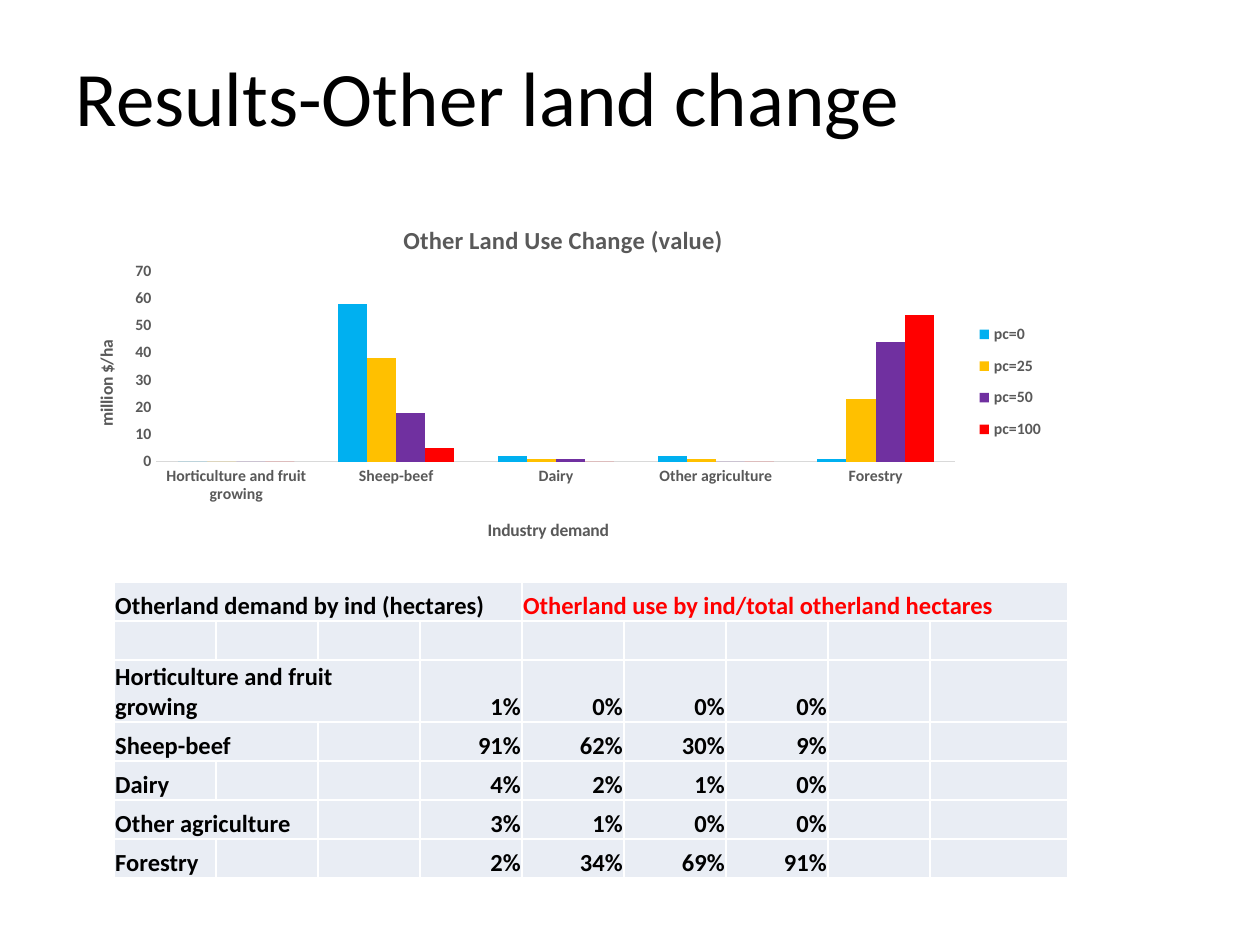
from dataclasses import dataclass
from typing import Any, NamedTuple, Optional

from lxml.etree import SubElement
from pptx import Presentation
from pptx.chart.data import CategoryChartData
from pptx.dml.color import RGBColor
from pptx.enum.chart import XL_CHART_TYPE as ChartType
from pptx.enum.chart import XL_LEGEND_POSITION as LegendPosition
from pptx.enum.chart import XL_TICK_MARK as TickMark
from pptx.enum.text import MSO_ANCHOR as Anchor
from pptx.enum.text import PP_ALIGN as Align
from pptx.oxml import parse_xml
from pptx.oxml.ns import nsdecls, qn
from pptx.util import Emu, Pt

EMU_PER_PX = 914400 / 126


@dataclass(frozen=True)
class Theme:
    font: str = "Calibri"
    black: str = "000000"
    gray: str = "595959"
    axis_line: str = "D9D9D9"
    red: str = "FF0000"
    cell: str = "E9EDF4"
    border: str = "FFFFFF"
    title_size: int = 44
    heading_size: int = 14
    axis_title_size: int = 10
    label_size: int = 9


class Box(NamedTuple):
    left: int
    top: int
    width: int
    height: int


class Series(NamedTuple):
    name: str
    color: str
    values: tuple[int, ...]


class LandUse(NamedTuple):
    industry: str
    span: int
    shares: tuple[int, ...]


THEME = Theme()
TITLE_BOX = Box(63, 38, 1134, 157)
CHART_BOX = Box(63, 195, 994, 367)
PLOT_BOX = Box(156, 271, 799, 191)
LEGEND_BOX = Box(972, 312, 78, 140)
COLUMN_WIDTHS = [102] * 8 + [138]
ROW_HEIGHTS = [39, 39, 62] + [39] * 4
TABLE_BOX = Box(114, 582, sum(COLUMN_WIDTHS), sum(ROW_HEIGHTS))
FIRST_SHARE_COLUMN = 3
SERIES = [
    Series("pc=0", "00B0F0", (0, 58, 2, 2, 1)),
    Series("pc=25", "FFC000", (0, 38, 1, 1, 23)),
    Series("pc=50", "7030A0", (0, 18, 1, 0, 44)),
    Series("pc=100", "FF0000", (0, 5, 0, 0, 54)),
]
LAND_USES = [
    LandUse("Horticulture and fruit growing", 3, (1, 0, 0, 0)),
    LandUse("Sheep-beef", 2, (91, 62, 30, 9)),
    LandUse("Dairy", 1, (4, 2, 1, 0)),
    LandUse("Other agriculture", 2, (3, 1, 0, 0)),
    LandUse("Forestry", 1, (2, 34, 69, 91)),
]


def px(length: int) -> Emu:
    return Emu(round(length * EMU_PER_PX))


def set_all(target: Any, values: dict[str, Any]) -> None:
    for name, value in values.items():
        setattr(target, name, value)


def style_font(font: Any, size: int, color: str, bold: bool = True) -> None:
    set_all(font, {"name": THEME.font, "size": Pt(size), "bold": bold})
    font.color.rgb = RGBColor.from_string(color)


def add_title(slide: Any, text: str) -> None:
    title = slide.shapes.title
    set_all(title, {name: px(value) for name, value in TITLE_BOX._asdict().items()})
    frame = title.text_frame
    set_all(frame, {"text": text, "vertical_anchor": Anchor.TOP, "margin_top": px(11)})
    paragraph = frame.paragraphs[0]
    paragraph.alignment = Align.LEFT
    style_font(paragraph.runs[0].font, THEME.title_size, THEME.black, False)


def place(element: Any, left: int, top: int, size: Optional[tuple[int, int]] = None,
          after: Optional[str] = None, inner: bool = False) -> None:
    for old in element.findall(qn("c:layout")):
        element.remove(old)
    layout = parse_xml(f'<c:layout {nsdecls("c")}><c:manualLayout/></c:layout>')
    values = {"layoutTarget": "inner"} if inner else {}
    values |= {"xMode": "edge", "yMode": "edge",
               "x": f"{(left - CHART_BOX.left) / CHART_BOX.width:.3f}",
               "y": f"{(top - CHART_BOX.top) / CHART_BOX.height:.3f}"}
    if size:
        values |= {"w": f"{size[0] / CHART_BOX.width:.3f}",
                   "h": f"{size[1] / CHART_BOX.height:.3f}"}
    for name, value in values.items():
        SubElement(layout[0], qn(f"c:{name}")).set("val", value)
    if after:
        element.find(qn(after)).addnext(layout)
    else:
        element.insert(0, layout)


def write_title(title: Any, text: str, size: int, left: int, top: int) -> None:
    title.text_frame.text = text
    style_font(title.text_frame.paragraphs[0].runs[0].font, size, THEME.gray)
    place(title.element, left, top, after="c:tx")


def add_land_chart(slide: Any) -> None:
    data = CategoryChartData(number_format="0")
    data.categories = [use.industry for use in LAND_USES]
    for series in SERIES:
        data.add_series(series.name, series.values)
    chart = slide.shapes.add_chart(
        ChartType.COLUMN_CLUSTERED, *map(px, CHART_BOX), data).chart
    style_font(chart.font, THEME.label_size, THEME.gray)

    plot = chart.plots[0]
    set_all(plot, {"gap_width": 150, "overlap": 0, "vary_by_categories": False})
    for drawn, series in zip(plot.series, SERIES):
        drawn.format.fill.solid()
        drawn.format.fill.fore_color.rgb = RGBColor.from_string(series.color)
        drawn.invert_if_negative = False

    category, value = chart.category_axis, chart.value_axis
    for axis in (category, value):
        set_all(axis, {"major_tick_mark": TickMark.NONE, "minor_tick_mark": TickMark.NONE,
                       "has_major_gridlines": False})
        style_font(axis.tick_labels.font, THEME.label_size, THEME.gray)
    set_all(value, {"minimum_scale": 0, "maximum_scale": 70, "major_unit": 10})
    value.format.line.fill.background()
    category.format.line.width = Pt(0.75)
    category.format.line.color.rgb = RGBColor.from_string(THEME.axis_line)

    chart.has_title = True
    write_title(chart.chart_title, "Other Land Use Change (value)",
                THEME.heading_size, 399, 219)
    write_title(category.axis_title, "Industry demand", THEME.axis_title_size, 484, 515)
    write_title(value.axis_title, "million $/ha", THEME.axis_title_size, 92, 337)
    body = chart.element.xpath(".//c:valAx/c:title//a:bodyPr")[0]
    body.set("rot", "-5400000")
    body.set("vert", "horz")

    chart.has_legend = True
    set_all(chart.legend, {"position": LegendPosition.RIGHT, "include_in_layout": False})
    style_font(chart.legend.font, THEME.label_size, THEME.gray)
    place(chart.element.xpath(".//c:legend")[0], *LEGEND_BOX[:2], LEGEND_BOX[2:],
          after="c:legendPos")
    place(chart.element.xpath(".//c:plotArea")[0], *PLOT_BOX[:2], PLOT_BOX[2:], inner=True)


def format_cell(cell: Any) -> None:
    margin = Pt(0.7)
    set_all(cell, {"margin_left": margin, "margin_right": margin, "margin_top": margin,
                   "margin_bottom": 0, "vertical_anchor": Anchor.BOTTOM})
    properties = cell._tc.get_or_add_tcPr()
    for side in ("lnL", "lnR", "lnT", "lnB"):
        properties.append(parse_xml(
            f'<a:{side} {nsdecls("a")} w="12700"><a:solidFill>'
            f'<a:srgbClr val="{THEME.border}"/></a:solidFill></a:{side}>'))
    cell.fill.solid()
    cell.fill.fore_color.rgb = RGBColor.from_string(THEME.cell)
    end = SubElement(cell.text_frame.paragraphs[0]._p, qn("a:endParaRPr"))
    end.set("sz", str(THEME.heading_size * 100))


def write_cell(table: Any, row: int, column: int, text: str, span: int = 1,
               color: str = THEME.black, align: Align = Align.LEFT) -> None:
    cell = table.cell(row, column)
    if span > 1:
        cell.merge(table.cell(row, column + span - 1))
    paragraph = cell.text_frame.paragraphs[0]
    paragraph.alignment = align
    run = paragraph.add_run()
    run.text = text
    style_font(run.font, THEME.heading_size, color)


def add_land_table(slide: Any) -> None:
    table = slide.shapes.add_table(
        len(ROW_HEIGHTS), len(COLUMN_WIDTHS), *map(px, TABLE_BOX)).table
    set_all(table, {"first_row": False, "horz_banding": False})
    for column, width in zip(table.columns, COLUMN_WIDTHS):
        column.width = px(width)
    for row, height in zip(table.rows, ROW_HEIGHTS):
        row.height = px(height)
    for cell in table.iter_cells():
        format_cell(cell)
    write_cell(table, 0, 0, "Otherland demand by ind (hectares)", 4)
    write_cell(table, 0, 4, "Otherland use by ind/total otherland hectares", 5, THEME.red)
    for row, use in enumerate(LAND_USES, start=2):
        write_cell(table, row, 0, use.industry, use.span)
        for column, share in enumerate(use.shares, start=FIRST_SHARE_COLUMN):
            write_cell(table, row, column, f"{share}%", align=Align.RIGHT)


def main() -> None:
    presentation = Presentation()
    set_all(presentation, {"slide_width": px(1260), "slide_height": px(945)})
    slide = presentation.slides.add_slide(presentation.slide_layouts[5])
    add_title(slide, "Results-Other land change")
    add_land_chart(slide)
    add_land_table(slide)
    presentation.save("out.pptx")


if __name__ == "__main__":
    main()
